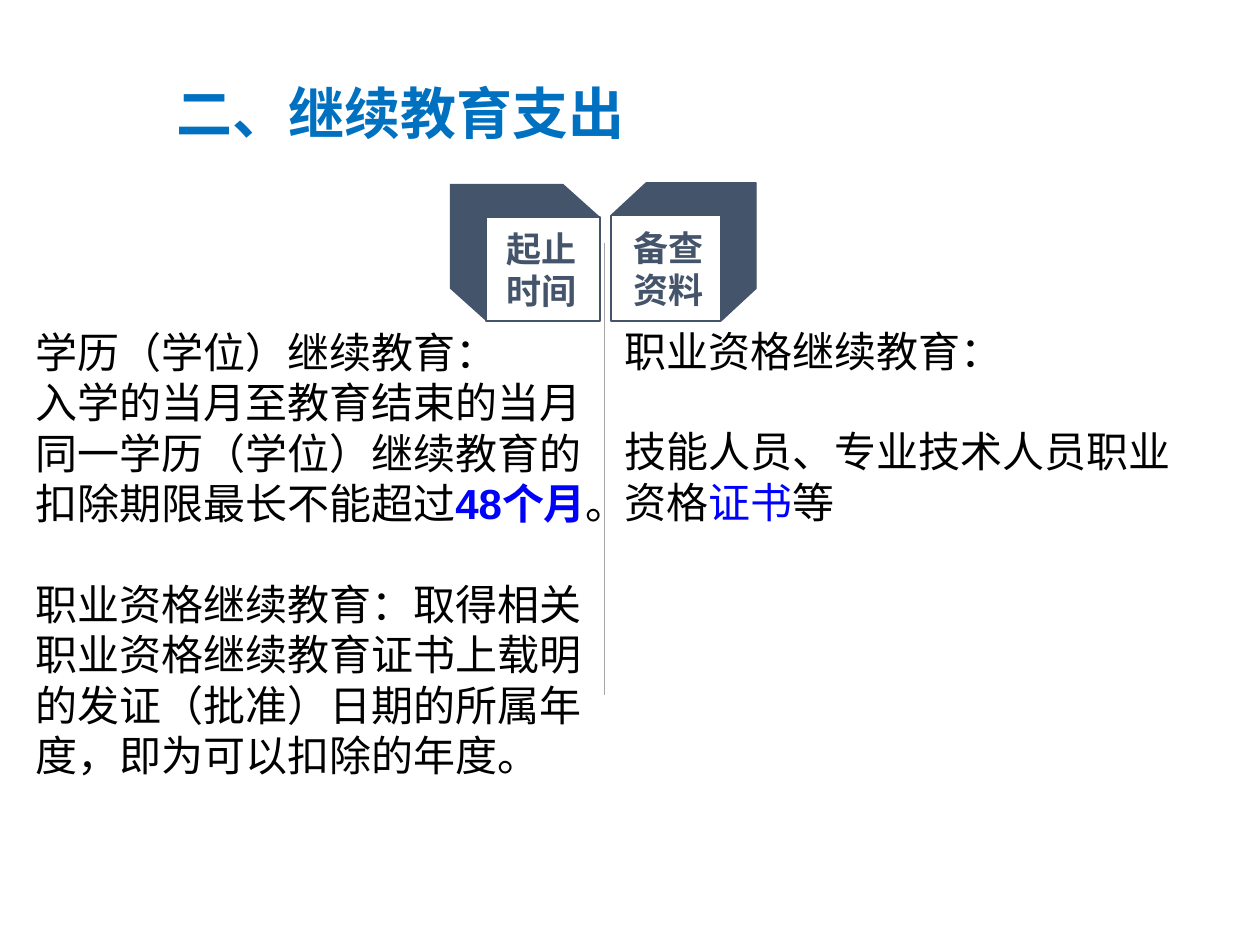
from dataclasses import dataclass

from lxml import etree
from pptx import Presentation
from pptx.dml.color import RGBColor
from pptx.enum.shapes import MSO_CONNECTOR, MSO_SHAPE
from pptx.enum.text import MSO_ANCHOR, MSO_AUTO_SIZE, PP_ALIGN
from pptx.oxml.ns import qn
from pptx.util import Inches, Pt

RECT = MSO_SHAPE.RECTANGLE
STRAIGHT = MSO_CONNECTOR.STRAIGHT
TOP, MIDDLE = MSO_ANCHOR.TOP, MSO_ANCHOR.MIDDLE
LEFT = PP_ALIGN.LEFT
NO_FIT = MSO_AUTO_SIZE.NONE
TWO_CONTENT = 3
WIDTH, HEIGHT = Inches(10), Inches(7.5)
COLS, ROWS = 100, 75


@dataclass(frozen=True)
class Theme:
    text: str = "000000"
    title: str = "0070C0"
    accent: str = "0000FF"
    cube: str = "44546A"
    face: str = "FFFFFF"
    rule: str = "A6A6A6"
    body_font: str = "Arial"
    head_font: str = "Noto Sans CJK SC"
    title_size: float = 32
    body_size: float = 24
    label_size: float = 20
    gap: float = 28.8


THEME = Theme()


def x(col):
    return round(WIDTH * col / COLS)


def y(row):
    return round(HEIGHT * row / ROWS)


def place(sp, col, row, cols, rows):
    sp.left, sp.top, sp.width, sp.height = x(col), y(row), x(cols), y(rows)


def rgb(color):
    return RGBColor.from_string(color)


def add_run(p, text, size=THEME.body_size, font=THEME.body_font,
            color=THEME.text, bold=False):
    r = p.add_run()
    r.text = text
    r.font.size, r.font.name, r.font.bold = Pt(size), font, bold
    r.font.color.rgb = rgb(color)


def paragraphs(tf, count):
    return [tf.paragraphs[0]] + [tf.add_paragraph() for _ in range(count - 1)]


def fill_title(sp, text):
    place(sp, 13, 4.5, 78.4, 6.1)
    tf = sp.text_frame
    tf.auto_size, tf.vertical_anchor, tf.word_wrap = NO_FIT, MIDDLE, True
    p = tf.paragraphs[0]
    p.alignment, p.line_spacing = LEFT, 1.5
    add_run(p, text, size=THEME.title_size, font=THEME.head_font,
            color=THEME.title, bold=True)


def fill_body(sp, box, items):
    """Each item is (space before in points, list of (text, run format))."""
    place(sp, *box)
    tf = sp.text_frame
    tf.auto_size, tf.vertical_anchor, tf.word_wrap = NO_FIT, TOP, True
    for p, (space, runs) in zip(paragraphs(tf, len(items)), items):
        pPr = p._p.get_or_add_pPr()
        pPr.set("marL", "0")
        pPr.set("indent", "0")
        etree.SubElement(pPr, qn("a:buNone"))
        p.alignment, p.space_before = LEFT, Pt(space)
        for text, style in runs:
            add_run(p, text, **style)


def paint(sp, fill, line=None, width=1):
    sp.shadow.inherit = False
    sp.fill.solid()
    sp.fill.fore_color.rgb = rgb(fill)
    if line is None:
        sp.line.fill.background()
    else:
        sp.line.color.rgb = rgb(line)
        sp.line.width = Pt(width)


def add_cube(s, face, depth, outline=None):
    """Draw a face and its two sides; a negative depth goes left."""
    col, row, cols, rows = face
    dx, dy = depth
    near, far = (col, col + cols) if dx < 0 else (col + cols, col)
    bottom = row + rows
    points = [(far, row), (far + dx, row - dy), (near + dx, row - dy),
              (near + dx, bottom - dy), (near, bottom), (near, row)]
    start, *rest = [(x(c), y(r)) for c, r in points]
    fb = s.shapes.build_freeform(*start)
    fb.add_line_segments(rest, close=True)
    paint(fb.convert_to_shape(), THEME.cube, outline, 0.75)
    sp = s.shapes.add_shape(RECT, x(col), y(row), x(cols), y(rows))
    paint(sp, THEME.face, THEME.cube)


def add_label(s, box, lines):
    sp = s.shapes.add_textbox(0, 0, 0, 0)
    place(sp, *box)
    tf = sp.text_frame
    tf.word_wrap = False
    for p, line in zip(paragraphs(tf, len(lines)), lines):
        add_run(p, line, size=THEME.label_size, font=THEME.head_font,
                color=THEME.cube, bold=True)


def add_divider(s, col, top, bottom):
    sp = s.shapes.add_connector(STRAIGHT, x(col), y(top), x(col), y(bottom))
    sp.line.color.rgb = rgb(THEME.rule)
    sp.line.width = Pt(0.5)
    etree.SubElement(sp._element.spPr, qn("a:effectLst"))


def main():
    prs = Presentation()
    prs.slide_width, prs.slide_height = WIDTH, HEIGHT
    s = prs.slides.add_slide(prs.slide_layouts[TWO_CONTENT])
    title, period, papers = s.placeholders

    add_divider(s, 48, 19.3, 55.2)
    add_cube(s, (38.6, 17.2, 9, 8.3), (-2.9, 2.6))
    add_cube(s, (48.5, 17.1, 8.7, 8.4), (2.8, 2.6), THEME.cube)
    add_label(s, (39.2, 17.6, 7.6, 7.7), ["起止", "时间"])
    add_label(s, (49.3, 17.5, 7.6, 7.7), ["备查", "资料"])

    fill_title(title, "二、继续教育支出")
    fill_body(period, (1.8, 25.4, 45.8, 41.4), [
        (0, [("学历（学位）继续教育：", {})]),
        (0, [("入学的当月至教育结束的当月", {})]),
        (0, [("同一学历（学位）继续教育的扣除期限最长不能超过", {}),
             ("48个月", {"color": THEME.accent, "bold": True}),
             ("。", {})]),
        (THEME.gap, [("职业资格继续教育：取得相关职业资格继续教育证书上载明的"
                      "发证（批准）日期的所属年度，即为可以扣除的年度。", {})]),
    ])
    fill_body(papers, (48.6, 25.3, 48, 17.2), [
        (0, [("职业资格继续教育：", {})]),
        (THEME.gap, [("技能人员、专业技术人员职业资格", {}),
                     ("证书", {"color": THEME.accent}),
                     ("等", {})]),
    ])
    prs.save("out.pptx")


if __name__ == "__main__":
    main()
